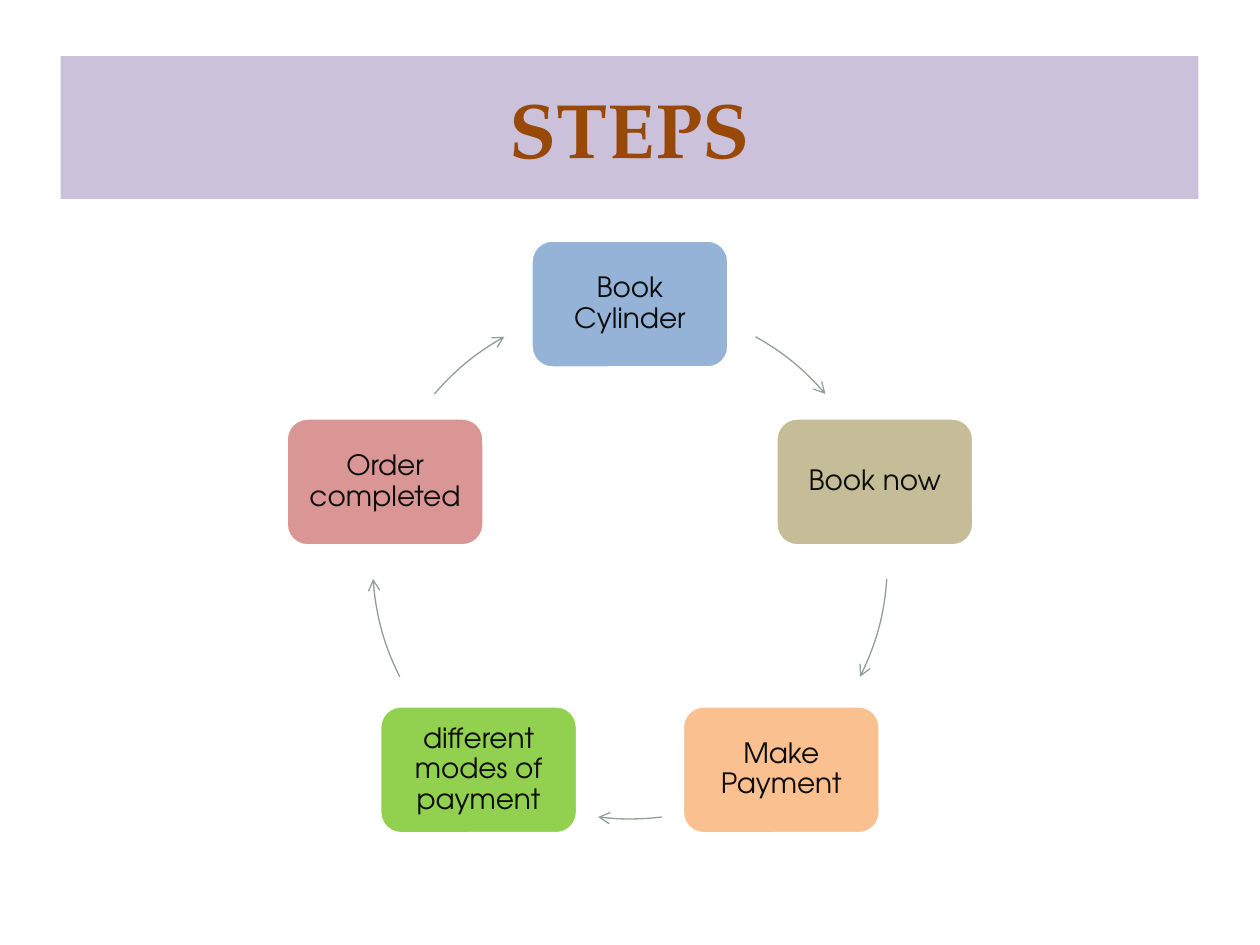
from dataclasses import dataclass
from math import cos, radians, sin

from lxml.etree import SubElement
from pptx import Presentation
from pptx.dml.color import RGBColor
from pptx.enum.shapes import MSO_SHAPE as Shape
from pptx.enum.text import MSO_ANCHOR as Anchor, MSO_AUTO_SIZE as AutoSize, PP_ALIGN as Align
from pptx.oxml.ns import qn
from pptx.util import Cm, Pt


@dataclass(frozen=True)
class Theme:
    banner: str = "CCC1DA"
    heading: str = "984807"
    ink: str = "0D0D0D"
    outline: str = "FFFFFF"
    arrow: str = "8F9F95"
    heading_font: str = "TeX Gyre Pagella"
    step_font: str = "TeX Gyre Adventor"
    heading_size: int = 44
    step_size: int = 16


THEME = Theme()

# Boxes are left, top, width, height in centimetres
BANNER_BOX = (1.22, 1.13, 22.94, 2.88)
RING_BOX = (7.51, 6.13, 10.38, 10.38)
STEP_WIDTH, STEP_HEIGHT = 3.99, 2.58

# Clockwise from the top: wording, fill, arc to the next step in degrees
STEPS = [
    ("Book Cylinder", "95B3D7", (299.2, 319.4)),
    ("Book now", "C4BD97", (3.9, 26.6)),
    ("Make Payment", "FAC090", (82.9, 97.1)),
    ("different modes of payment", "92D050", (153.4, 176.1)),
    ("Order completed", "D99694", (220.6, 240.8)),
]


def apply(target, formats):
    for name, value in formats.items():
        setattr(target, name, value)


def paint(fill, color):
    fill.solid()
    fill.fore_color.rgb = RGBColor.from_string(color)


def write(shape, wording, frame_formats, paragraph_formats, font_formats, color):
    frame = shape.text_frame
    frame.text = wording
    apply(frame, {"word_wrap": True, "auto_size": AutoSize.NONE,
                  "vertical_anchor": Anchor.MIDDLE, **frame_formats})
    paragraph = frame.paragraphs[0]
    apply(paragraph, {"alignment": Align.CENTER, **paragraph_formats})
    font = paragraph.runs[0].font
    apply(font, font_formats)
    font.color.rgb = RGBColor.from_string(color)


def place_heading(slide, box):
    heading = slide.shapes.title
    apply(heading, dict(zip(("left", "top", "width", "height"), map(Cm, box))))
    paint(heading.fill, THEME.banner)
    write(heading, "STEPS", {}, {},
          {"name": THEME.heading_font, "size": Pt(THEME.heading_size), "bold": True},
          THEME.heading)


def add_step(shapes, center_x, center_y, wording, color):
    step = shapes.add_shape(Shape.ROUNDED_RECTANGLE,
                            Cm(center_x - STEP_WIDTH / 2), Cm(center_y - STEP_HEIGHT / 2),
                            Cm(STEP_WIDTH), Cm(STEP_HEIGHT))
    step.shadow.inherit = False
    paint(step.fill, color)
    paint(step.line.fill, THEME.outline)
    step.line.width = Pt(2)
    margins = ("margin_left", "margin_top", "margin_right", "margin_bottom")
    write(step, wording, dict.fromkeys(margins, Cm(0.3)),
          {"line_spacing": 0.9, "space_after": Pt(7)},
          {"name": THEME.step_font, "size": Pt(THEME.step_size)}, THEME.ink)


def add_arc(shapes, box, angles):
    arc = shapes.add_shape(Shape.ARC, *map(Cm, box))
    arc.shadow.inherit = False
    arc.fill.background()
    # Arc angles are stored in 60000ths of a degree, adjustments in 100000ths
    for index, angle in enumerate(angles):
        arc.adjustments[index] = angle * 0.6
    paint(arc.line.fill, THEME.arrow)
    arc.line.width = Pt(0.75)
    SubElement(arc.line._get_or_add_ln(), qn("a:tailEnd"), type="arrow")


def place_cycle(slide, box):
    left, top, width, height = box
    shapes = slide.shapes.add_group_shape().shapes
    for index, (wording, color, arc_angles) in enumerate(STEPS):
        angle = radians(360 / len(STEPS) * index - 90)
        center_x = left + width / 2 * (1 + cos(angle))
        center_y = top + height / 2 * (1 + sin(angle))
        add_step(shapes, center_x, center_y, wording, color)
        add_arc(shapes, box, arc_angles)


def main():
    deck = Presentation()
    apply(deck, {"slide_width": Cm(25.4), "slide_height": Cm(19.05)})
    slide = deck.slides.add_slide(deck.slide_layouts.get_by_name("Title Only"))
    place_heading(slide, BANNER_BOX)
    place_cycle(slide, RING_BOX)
    deck.save("out.pptx")


if __name__ == "__main__":
    main()
